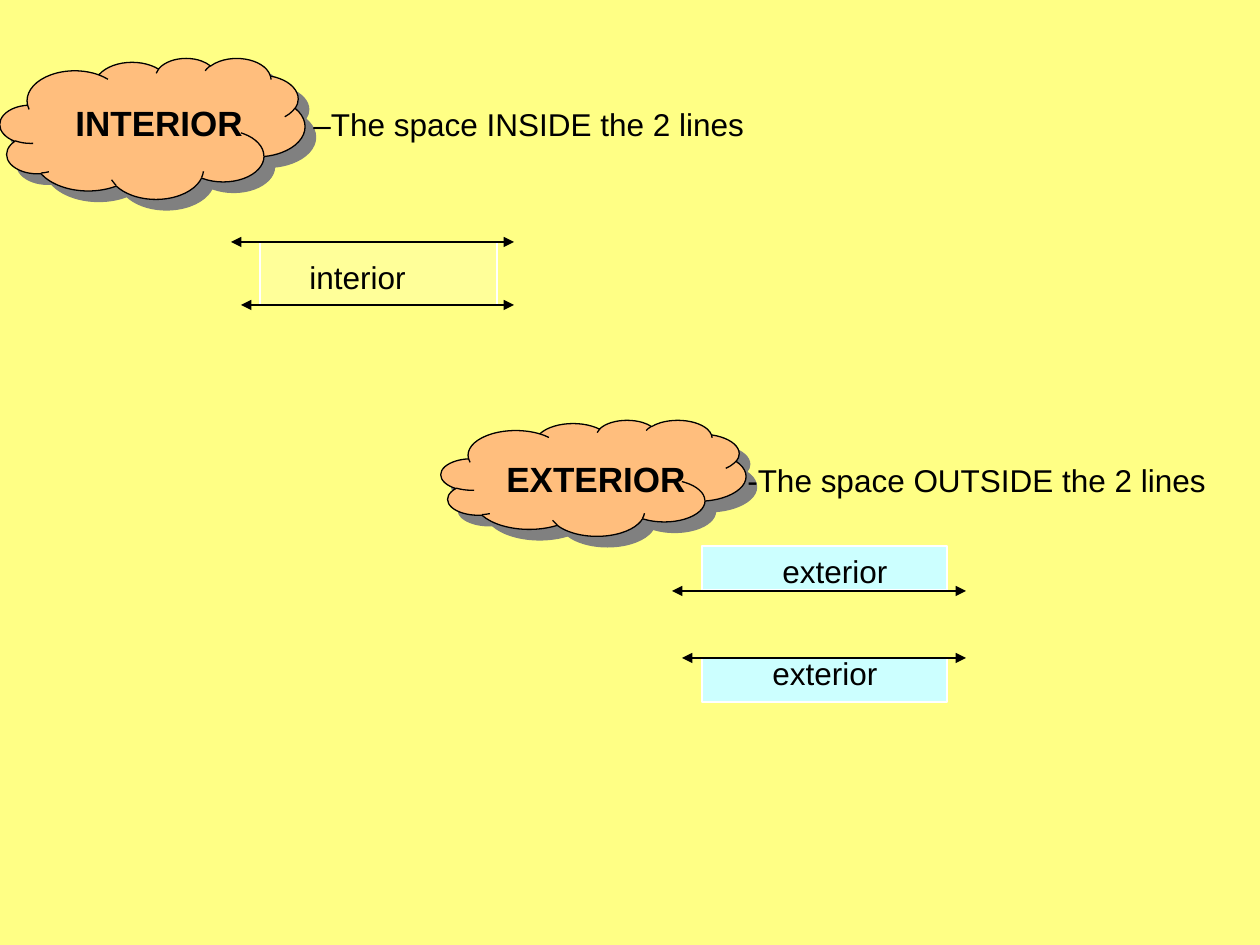
from lxml import etree
from pptx import Presentation
from pptx.dml.color import RGBColor
from pptx.enum.shapes import MSO_CONNECTOR, MSO_SHAPE
from pptx.oxml.ns import qn
from pptx.util import Emu, Pt

CLOUD = MSO_SHAPE.CLOUD
RECT = MSO_SHAPE.RECTANGLE
LINE = MSO_CONNECTOR.STRAIGHT

SCALE = 914400 / 126
FONT = "Arial"
COLOR = {
    "page": "FFFF85", "cloud": "FFBE7D", "shade": "808080", "ink": "000000",
    "inner": "FFFF99", "outer": "CCFFFF", "edge": "FFFFFF",
}


def px(n):
    return Emu(round(n * SCALE))


def rgb(name):
    return RGBColor.from_string(COLOR[name])


def add_run(para, text, size=18, bold=False, color="ink"):
    run = para.add_run()
    run.text = text
    font = run.font
    font.name, font.size, font.bold = FONT, Pt(size), bold
    font.color.rgb = rgb(color)


class Page:
    def __init__(self, slide):
        self.slide = slide
        self.shapes = slide.shapes
        fill = slide.background.fill
        fill.solid()
        fill.fore_color.rgb = rgb("page")

    def shape(self, kind, box, fill, line, width):
        item = self.shapes.add_shape(kind, *map(px, box))
        item.shadow.inherit = False
        item.fill.solid()
        item.fill.fore_color.rgb = rgb(fill)
        item.line.color.rgb = rgb(line)
        item.line.width = Pt(width)
        return item

    def band(self, box, fill):
        self.shape(RECT, box, fill, "edge", 0)

    def cloud(self, box):
        item = self.shape(CLOUD, box, "cloud", "ink", 0.75)
        effects = item._element.spPr.find(qn("a:effectLst"))
        shade = etree.SubElement(effects, qn("a:outerShdw"), dist=str(Pt(8.5)),
                                 dir="2700000", algn="ctr", rotWithShape="0")
        etree.SubElement(shade, qn("a:srgbClr"), val=COLOR["shade"])

    def arrow(self, left, right, y):
        item = self.shapes.add_connector(LINE, px(left), px(y), px(right), px(y))
        item.line.color.rgb = rgb("ink")
        item.line.width = Pt(0.75)
        line = item.line._get_or_add_ln()
        for end in ("a:headEnd", "a:tailEnd"):
            etree.SubElement(line, qn(end), type="triangle")
        etree.SubElement(item._element.spPr, qn("a:effectLst"))

    def text(self, box):
        frame = self.shapes.add_textbox(*map(px, box)).text_frame
        frame.word_wrap = True
        para = frame.paragraphs[0]
        para.space_before = Pt(2)
        return para

    def label(self, box, text):
        add_run(self.text(box), text)

    def term(self, box, word, meaning, tab):
        para = self.text(box)
        stops = etree.SubElement(para._p.get_or_add_pPr(), qn("a:tabLst"))
        etree.SubElement(stops, qn("a:tab"), pos=str(px(tab)), algn="l")
        add_run(para, word, size=20, bold=True)
        add_run(para, "\t" + meaning)


def main():
    deck = Presentation()
    deck.slide_width, deck.slide_height = px(1260), px(945)
    page = Page(deck.slides.add_slide(deck.slide_layouts[6]))

    # Clouds behind the two terms
    page.cloud((441, 420, 305, 116))
    page.cloud((0, 58, 305, 141))

    # Interior: the band between the lines
    page.band((260, 242, 237, 63), "inner")
    page.arrow(231, 514, 242)
    page.arrow(241, 514, 305)
    page.label((297, 252, 132, 50), "interior")

    # Terms and meanings
    page.term((63, 95, 725, 54), "INTERIOR", "–The space INSIDE the 2 lines", 238)
    page.term((494, 451, 766, 54), "EXTERIOR", "-The space OUTSIDE the 2 lines", 241)

    # Exterior: bands above and below the lines
    for y in (546, 658):
        page.band((702, y, 245, 44), "outer")
    page.arrow(672, 966, 591)
    page.arrow(682, 966, 658)
    for left, top in ((760, 648), (770, 546)):
        page.label((left, top, 137, 50), "exterior")

    deck.save("out.pptx")


if __name__ == "__main__":
    main()
